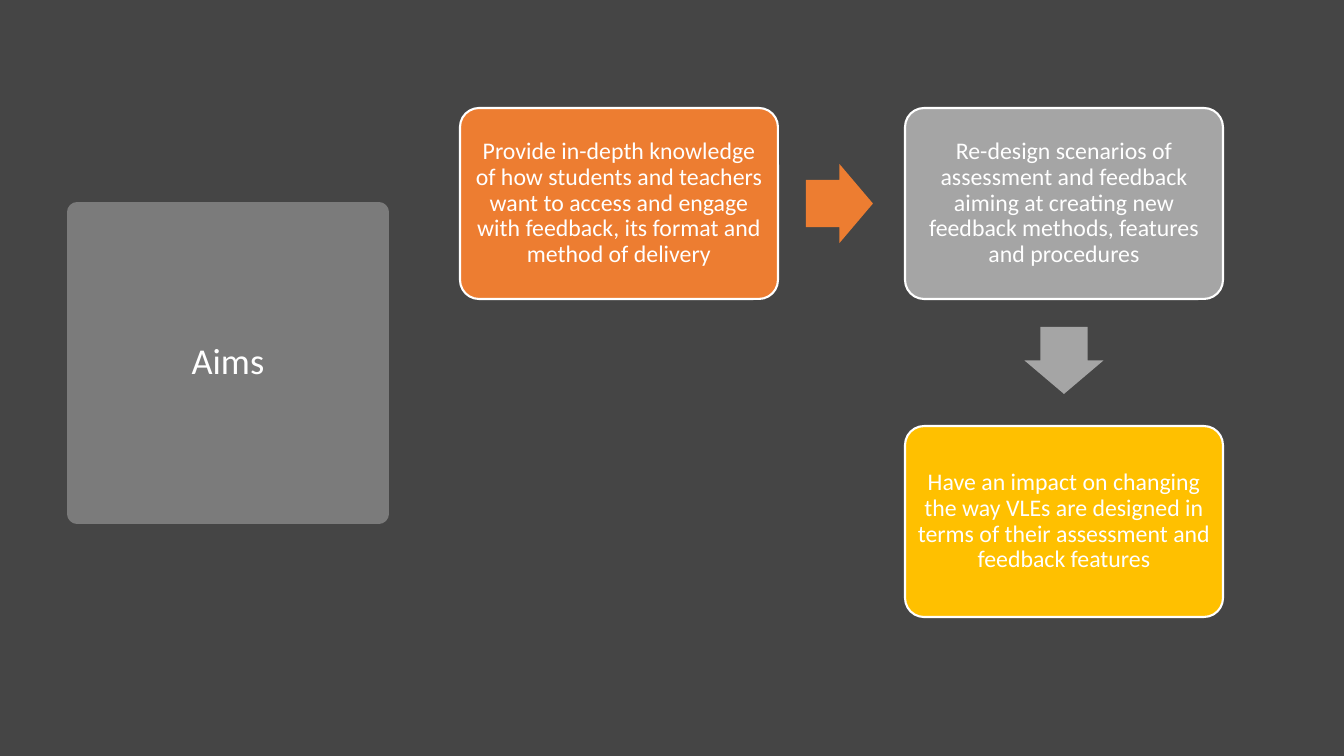
from dataclasses import dataclass

from lxml.etree import SubElement
from pptx import Presentation
from pptx.dml.color import RGBColor
from pptx.enum.shapes import MSO_SHAPE
from pptx.enum.text import MSO_ANCHOR, PP_ALIGN
from pptx.oxml.ns import qn
from pptx.util import Emu, Pt


@dataclass(frozen=True)
class Theme:
    font: str = "Calibri"
    background: str = "454545"
    title_fill: str = "7B7B7B"
    white: str = "FFFFFF"
    orange: str = "ED7D31"
    gray: str = "A5A5A5"
    gold: str = "FFC000"
    title_size: float = 26
    step_size: float = 17
    title_border: float = 13.75
    step_border: float = 1.5


THEME = Theme()
PAGE_WIDTH, PAGE_HEIGHT = 1344, 756
STEP_WIDTH, STEP_HEIGHT = 318, 191
COLUMN_PITCH, ROW_PITCH = 445, 318
ARROW_LENGTH, ARROW_BREADTH, ARROW_GAP = 67, 79, 28

# Column, row, fill, direction to the next step, wording
STEPS = [
    (0, 0, THEME.orange, "right",
     "Provide in-depth knowledge of how students and teachers want to access "
     "and engage with feedback, its format and method of delivery"),
    (1, 0, THEME.gray, "down",
     "Re-design scenarios of assessment and feedback aiming at creating new "
     "feedback methods, features and procedures"),
    (1, 1, THEME.gold, None,
     "Have an impact on changing the way VLEs are designed in terms of their "
     "assessment and feedback features"),
]


def px(length):
    return Emu(round(length * 914400 / 100.8))


def add_filled(page, kind, box, fill, border=None, width=0):
    shape = page.shapes.add_shape(kind, *(px(length) for length in box))
    shape.shadow.inherit = False
    shape.fill.solid()
    shape.fill.fore_color.rgb = RGBColor.from_string(fill)
    if border:
        shape.line.color.rgb = RGBColor.from_string(border)
        shape.line.width = Pt(width)
    else:
        shape.line.fill.background()
    return shape


def write_centered(shape, text, size, inset):
    frame = shape.text_frame
    frame.word_wrap = True
    frame.vertical_anchor = MSO_ANCHOR.MIDDLE
    frame.margin_left = frame.margin_right = px(inset)
    frame.margin_top = frame.margin_bottom = px(inset)
    para = frame.paragraphs[0]
    para.alignment = PP_ALIGN.CENTER
    para.line_spacing = 0.9
    span = para.add_run()
    span.text = text
    span.font.name = THEME.font
    span.font.size = Pt(size)
    span.font.color.rgb = RGBColor.from_string(THEME.white)


def add_title(page, box):
    tile = add_filled(page, MSO_SHAPE.RECTANGLE, box, THEME.title_fill,
                      THEME.title_fill, THEME.title_border)
    # Round joins soften the corners of the thick border
    SubElement(tile.line._get_or_add_ln(), qn("a:round"))
    write_centered(tile, "Aims", THEME.title_size, 10)


def add_arrow(page, step_box, direction, fill):
    left, top, width, height = step_box
    center_x, center_y = left + width / 2, top + height / 2
    reach = ARROW_GAP + ARROW_LENGTH / 2
    if direction == "right":
        center_x = left + width + reach
    else:
        center_y = top + height + reach
    box = (center_x - ARROW_LENGTH / 2, center_y - ARROW_BREADTH / 2,
           ARROW_LENGTH, ARROW_BREADTH)
    arrow = add_filled(page, MSO_SHAPE.RIGHT_ARROW, box, fill)
    arrow.adjustments[0] = 0.6
    arrow.adjustments[1] = 0.5
    arrow.rotation = 0 if direction == "right" else 90


def add_process(page, left, top):
    for column, row, fill, direction, text in STEPS:
        box = (left + column * COLUMN_PITCH, top + row * ROW_PITCH,
               STEP_WIDTH, STEP_HEIGHT)
        step = add_filled(page, MSO_SHAPE.ROUNDED_RECTANGLE, box, fill,
                          THEME.white, THEME.step_border)
        step.adjustments[0] = 0.1
        write_centered(step, text, THEME.step_size, 7)
        if direction:
            add_arrow(page, box, direction, fill)


def main():
    deck = Presentation()
    deck.slide_width, deck.slide_height = px(PAGE_WIDTH), px(PAGE_HEIGHT)
    page = deck.slides.add_slide(deck.slide_layouts[6])
    page.background.fill.solid()
    page.background.fill.fore_color.rgb = RGBColor.from_string(THEME.background)
    # Title tile on the left, process steps on the right
    add_title(page, (77, 212, 302, 302))
    add_process(page, 460, 108)
    deck.save("out.pptx")


if __name__ == "__main__":
    main()
